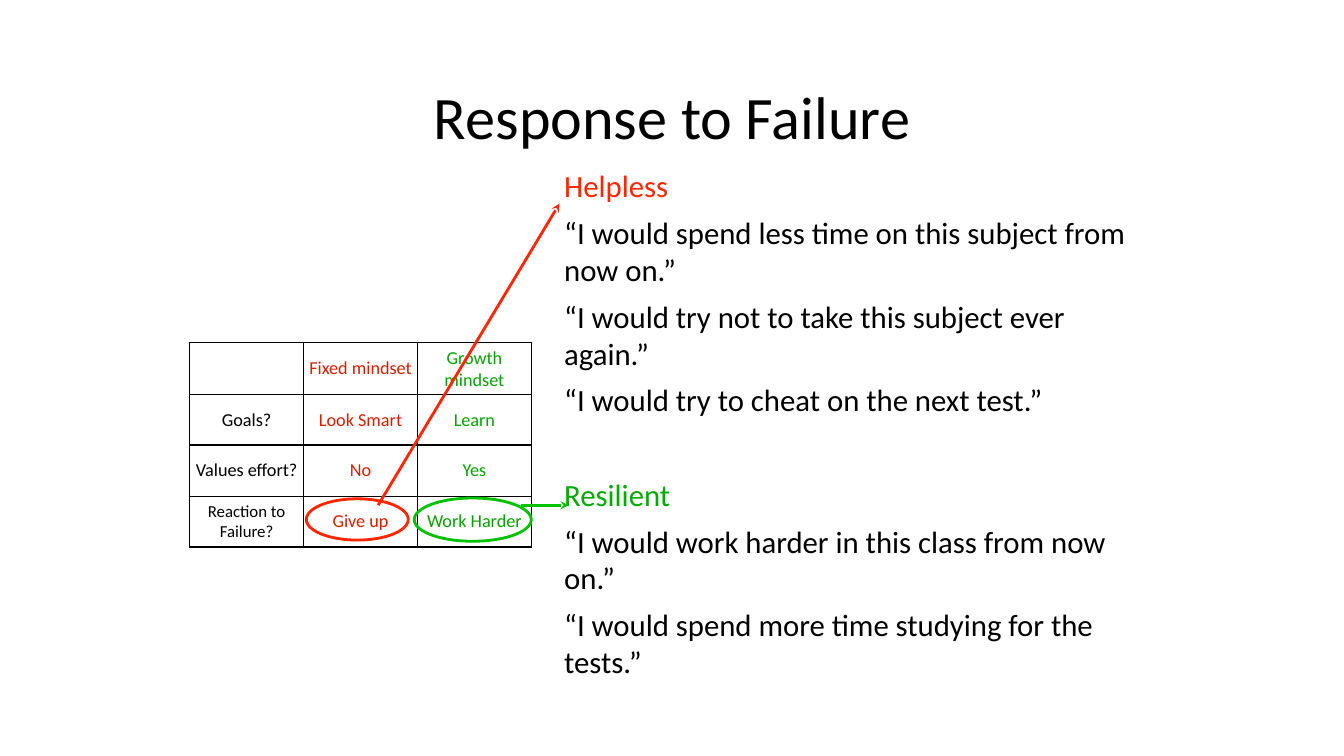
from lxml import etree
from pptx import Presentation
from pptx.dml.color import RGBColor
from pptx.enum import shapes, text
from pptx.oxml.ns import qn
from pptx.util import Cm, Pt

BLACK = RGBColor(0x00, 0x00, 0x00)
RED = RGBColor(0xFF, 0x26, 0x00)
GREEN = RGBColor(0x00, 0xC2, 0x00)
HEADING_GREEN = RGBColor(0x00, 0xAB, 0x00)
FIXED_RED = RGBColor(0xD8, 0x1E, 0x00)
GROWTH_GREEN = RGBColor(0x07, 0xA2, 0x03)
FONT = "Calibri"

TITLE = "Response to Failure"
RESPONSES = [
    ("Helpless", RED, 0),
    ("“I would spend less time on this subject from now on.”", BLACK, 7),
    ("“I would try not to take this subject ever again.”", BLACK, 7),
    ("“I would try to cheat on the next test.”", BLACK, 7),
    ("Resilient", HEADING_GREEN, 41),
    ("“I would work harder in this class from now on.”", BLACK, 7),
    ("“I would spend more time studying for the tests.”", BLACK, 7),
]
MINDSETS = [
    ("", "Fixed mindset", "Growth mindset"),
    ("Goals?", "Look Smart", "Learn"),
    ("Values effort?", "No", "Yes"),
    ("Reaction to Failure?", "Give up", "Work Harder"),
]
COLUMN_COLORS = (BLACK, FIXED_RED, GROWTH_GREEN)
ROW_HEIGHTS = (1.3, 1.27, 1.29, 1.28)
COLUMN_WIDTH = 2.87
ARROWS = [
    ((14.1, 5.13), (9.53, 12.73), RED),
    ((14.33, 12.73), (13.13, 12.73), GREEN),
]
OVALS = [
    ((10.44, 12.55, 2.95, 1.09), GREEN),
    ((7.72, 12.57, 2.57, 1.04), RED),
]


def cms(values):
    return [Cm(v) for v in values]


def set_margins(target, margin):
    target.margin_left = target.margin_right = Cm(margin)
    target.margin_top = target.margin_bottom = Cm(margin)


def set_font(p, size, color):
    p.font.name = FONT
    p.font.size = Pt(size)
    p.font.color.rgb = color


def add_text(s, box, margin, anchor):
    tf = s.shapes.add_textbox(*cms(box)).text_frame
    tf.word_wrap = True
    tf.vertical_anchor = anchor
    set_margins(tf, margin)
    return tf


def add_borders(cell):
    tc_pr = cell._tc.get_or_add_tcPr()
    for i, side in enumerate(("lnL", "lnR", "lnT", "lnB")):
        ln = etree.Element(qn(f"a:{side}"), w=str(Pt(1)))
        fill = etree.SubElement(ln, qn("a:solidFill"))
        etree.SubElement(fill, qn("a:srgbClr"), val=str(BLACK))
        tc_pr.insert(i, ln)


def add_mindset_table(s):
    box = (4.78, 8.64, COLUMN_WIDTH * len(COLUMN_COLORS), sum(ROW_HEIGHTS))
    table = s.shapes.add_table(len(MINDSETS), len(COLUMN_COLORS), *cms(box)).table
    table.first_row = table.horz_banding = False
    for column in table.columns:
        column.width = Cm(COLUMN_WIDTH)
    for r, (height, words) in enumerate(zip(ROW_HEIGHTS, MINDSETS)):
        table.rows[r].height = Cm(height)
        for c, (word, color) in enumerate(zip(words, COLUMN_COLORS)):
            cell = table.cell(r, c)
            cell.fill.background()
            cell.vertical_anchor = text.MSO_ANCHOR.MIDDLE
            set_margins(cell, 0.1)
            cell.text = word
            p = cell.text_frame.paragraphs[0]
            p.alignment = text.PP_ALIGN.CENTER
            set_font(p, 12 if word == "Reaction to Failure?" else 13, color)
            add_borders(cell)


def add_arrow(s, tip, tail, color):
    line = s.shapes.add_connector(shapes.MSO_CONNECTOR.STRAIGHT, *cms(tip + tail))
    line.line.color.rgb = color
    line.line.width = Pt(2)
    etree.SubElement(line.line._get_or_add_ln(), qn("a:headEnd"), type="stealth")
    etree.SubElement(line._element.spPr, qn("a:effectLst"))


def add_oval(s, box, color):
    sp = s.shapes.add_shape(shapes.MSO_SHAPE.OVAL, *cms(box))
    sp.shadow.inherit = False
    sp.fill.background()
    sp.line.color.rgb = color
    sp.line.width = Pt(2)


def main():
    prs = Presentation()
    prs.slide_width, prs.slide_height = Cm(33.87), Cm(19.05)
    s = prs.slides.add_slide(prs.slide_layouts[6])

    tf = add_text(s, (6.71, 0.51, 20.45, 4.78), 0.13, text.MSO_ANCHOR.MIDDLE)
    p = tf.paragraphs[0]
    p.text = TITLE
    p.alignment = text.PP_ALIGN.CENTER
    set_font(p, 43, BLACK)

    tf = add_text(s, (14.12, 4.11, 14.61, 14.12), 0.1, text.MSO_ANCHOR.TOP)
    for i, (words, color, gap) in enumerate(RESPONSES):
        p = tf.add_paragraph() if i else tf.paragraphs[0]
        p.text = words
        p.space_before = Pt(gap)
        set_font(p, 22, color)

    add_mindset_table(s)
    for tip, tail, color in ARROWS:
        add_arrow(s, tip, tail, color)
    for box, color in OVALS:
        add_oval(s, box, color)

    prs.save("out.pptx")


if __name__ == "__main__":
    main()
